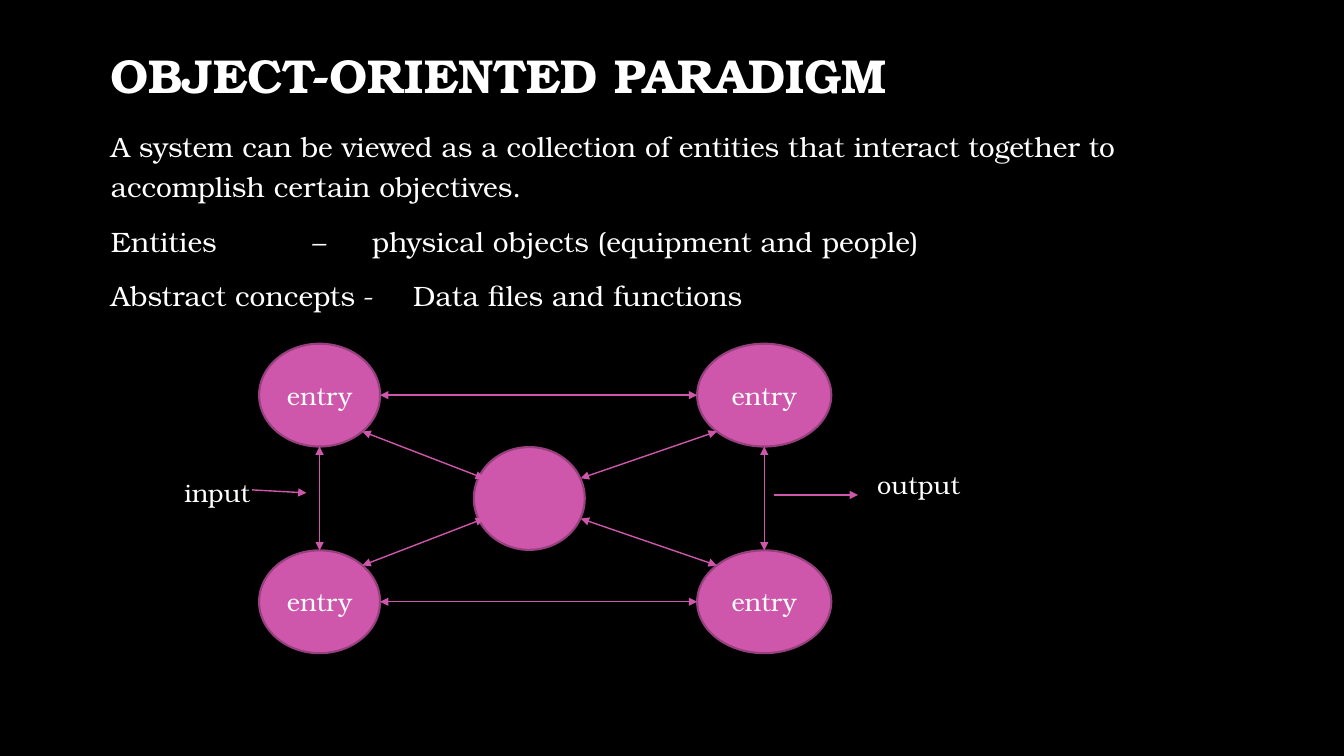
from dataclasses import dataclass

from lxml import etree
from pptx import Presentation
from pptx.dml.color import RGBColor
from pptx.enum.shapes import MSO_CONNECTOR, MSO_SHAPE
from pptx.enum.text import MSO_ANCHOR, PP_ALIGN
from pptx.oxml.ns import qn
from pptx.util import Inches, Pt

STRAIGHT = MSO_CONNECTOR.STRAIGHT
OVAL = MSO_SHAPE.OVAL
MIDDLE, TOP = MSO_ANCHOR.MIDDLE, MSO_ANCHOR.TOP
LEFT, CENTER = PP_ALIGN.LEFT, PP_ALIGN.CENTER


@dataclass(frozen=True)
class Theme:
    font: str = "TeX Gyre Bonum"
    background: RGBColor = RGBColor(0, 0, 0)
    text: RGBColor = RGBColor(255, 255, 255)
    accent: RGBColor = RGBColor(0xCE, 0x57, 0xAB)
    outline: RGBColor = RGBColor(0x98, 0x40, 0x7F)
    title_size: int = 34
    body_size: int = 20
    label_size: int = 18


theme = Theme()


def write(shape, lines, size, anchor=TOP, align=LEFT, spacing=1.0, bold=False):
    """Fill a shape with one themed paragraph for each line."""
    frame = shape.text_frame
    frame.word_wrap = True
    frame.vertical_anchor = anchor
    frame.text = "\n".join(lines)
    for index, paragraph in enumerate(frame.paragraphs):
        paragraph.alignment = align
        paragraph.line_spacing = spacing
        if index:
            paragraph.space_before = Pt(10)
        for run in paragraph.runs:
            run.font.name = theme.font
            run.font.size = Pt(size)
            run.font.bold = bold
            run.font.color.rgb = theme.text


def add_arrow(start, end, ends=("headEnd", "tailEnd")):
    """Draw a line between two points in inches, with a triangle at each of ends."""
    arrow = slide.shapes.add_connector(STRAIGHT, *map(Inches, start + end))
    arrow.line.color.rgb = theme.accent
    arrow.line.width = Pt(1)
    line = arrow.line._get_or_add_ln()
    for name in ends:
        etree.SubElement(line, qn("a:" + name), type="triangle")
    etree.SubElement(arrow._element.spPr, qn("a:effectLst"))


presentation = Presentation()
presentation.slide_width = Inches(13.33)
presentation.slide_height = Inches(7.5)
slide = presentation.slides.add_slide(presentation.slide_layouts[6])
slide.background.fill.solid()
slide.background.fill.fore_color.rgb = theme.background

# Title and body
margin, text_width = 1, 11.32
title = slide.shapes.add_textbox(*map(Inches, (margin, 0.38, text_width, 0.78)))
write(title, ["OBJECT-ORIENTED PARADIGM"], theme.title_size, MIDDLE, spacing=0.9, bold=True)

body = slide.shapes.add_textbox(*map(Inches, (margin, 1.17, text_width, 5.17)))
write(body, [
    "A system can be viewed as a collection of entities that interact together to "
    "accomplish certain objectives.",
    "Entities \t\t–\t physical objects (equipment and people)",
    "Abstract concepts\t-\tData files and functions",
], theme.body_size, spacing=1.2)

# Diagram grid: column and row centres, circle widths by column
left, hub, right = 3.17, 5.25, 7.58
top, middle, bottom = (3.92 + row * 1.025 for row in range(3))
widths = {left: 1.2, hub: 1.1, right: 1.33}
circle_height = 1.02
radius = circle_height / 2

circles = [
    (left, top, "entry"), (hub, middle, ""), (left, bottom, "entry"),
    (right, bottom, "entry"), (right, top, "entry"),
]
for x, y, label in circles:
    width = widths[x]
    circle = slide.shapes.add_shape(
        OVAL, *map(Inches, (x - width / 2, y - radius, width, circle_height)))
    circle.shadow.inherit = False
    circle.fill.solid()
    circle.fill.fore_color.rgb = theme.accent
    circle.line.color.rgb = theme.outline
    circle.line.width = Pt(1.5)
    if label:
        write(circle, [label], theme.label_size, MIDDLE, CENTER)

# Sides of the square of entries
for y in (top, bottom):
    add_arrow((left + widths[left] / 2, y), (right - widths[right] / 2, y))
for x in (left, right):
    add_arrow((x, top + radius), (x, bottom - radius))

# Diagonals from the 45 degree point of each entry to the hub
diagonal = 0.5 ** 0.5
for x, inward, hub_x in ((left, 1, 4.8), (right, -1, 5.76)):
    for y, down in ((top, 1), (bottom, -1)):
        corner = (x + inward * diagonal * widths[x] / 2, y + down * diagonal * radius)
        add_arrow(corner, (hub_x, middle - down * 0.2))

# Input and output
for label, x, y, width in (("input", 1.73, 4.69, 1.31), ("output", 8.6, 4.61, 1.51)):
    box = slide.shapes.add_textbox(*map(Inches, (x, y, width, 0.4)))
    write(box, [label], theme.label_size)
for start, end in (((2.5, 4.86), (3.04, 4.89)), ((7.68, 4.91), (8.51, 4.91))):
    add_arrow(start, end, ends=("tailEnd",))

presentation.save("out.pptx")
